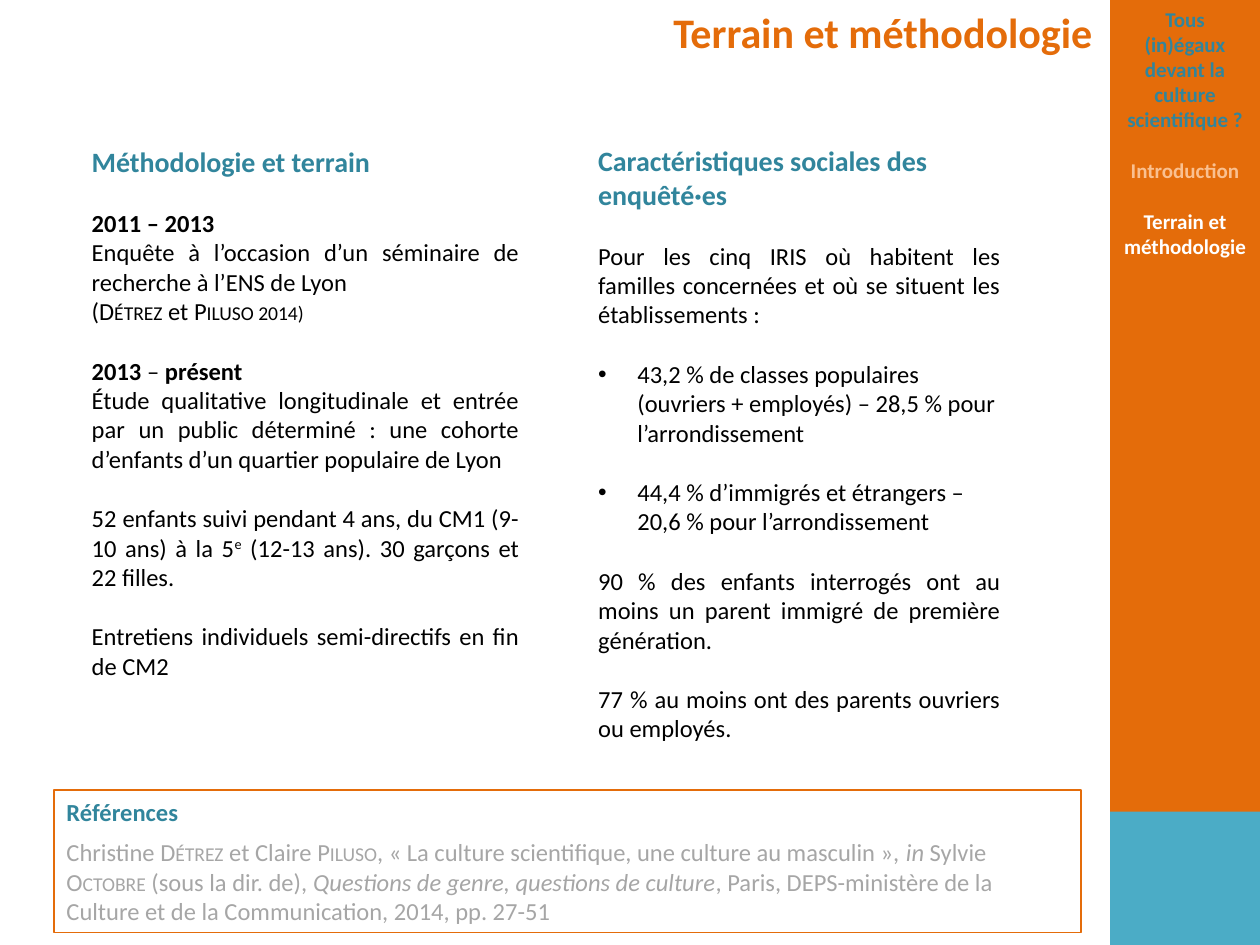
from lxml import etree
from pptx import Presentation
from pptx.dml.color import RGBColor
from pptx.enum import shapes, text
from pptx.oxml.ns import qn
from pptx.util import Cm, Pt

theme = {
    "font": "Calibri",
    "orange": "E46C0A", "peach": "FAC090", "teal": "31859C", "aqua": "4BACC6",
    "grey": "A6A6A6", "black": "000000", "white": "FFFFFF",
    "title": 24, "head": 16, "body": 14, "side": 12,
}

# Paragraph: (kind, gap before in lines, runs); run: (text, style letters)
# Styles: b bold, i italic, s small capitals, u superscript
title = [("title", 0, [("Terrain et méthodologie", "b")])]
menu = [
    ("menu", 0, [("Tous (in)égaux devant la culture scientifique ?", "b")]),
    ("past", 1, [("Introduction", "b")]),
    ("now", 1, [("Terrain et méthodologie", "b")]),
]
method = [
    ("head", 0, [("Méthodologie et terrain", "b")]),
    ("body", 1, [("2011 – 2013", "b")]),
    ("body", 0, [("Enquête à l’occasion d’un séminaire de recherche à l’ENS de Lyon", "")]),
    ("body", 0, [("(", ""), ("Détrez", "s"), (" et ", ""), ("Piluso 2014)", "s")]),
    ("body", 1, [("2013 ", "b"), ("– ", ""), ("présent", "b")]),
    ("body", 0, [("Étude qualitative longitudinale et entrée par un public déterminé : "
                  "une cohorte d’enfants d’un quartier populaire de Lyon", "")]),
    ("body", 1, [("52 enfants suivi pendant 4 ans, du CM1 (9-10 ans) à la 5", ""),
                 ("e", "u"), (" (12-13 ans). 30 garçons et 22 filles.", "")]),
    ("body", 1, [("Entretiens individuels semi-directifs en fin de CM2", "")]),
]
social = [
    ("head", 0, [("Caractéristiques sociales des enquêté·es", "b")]),
    ("body", 1, [("Pour les cinq IRIS où habitent les familles concernées "
                  "et où se situent les établissements :", "")]),
    ("item", 1, [("43,2 % de classes populaires (ouvriers + employés) "
                  "– 28,5 % pour l’arrondissement", "")]),
    ("item", 1, [("44,4 % d’immigrés et étrangers – 20,6 % pour l’arrondissement", "")]),
    ("body", 1, [("90 % des enfants interrogés ont au moins un parent immigré "
                  "de première génération.", "")]),
    ("body", 1, [("77 % au moins ont des parents ouvriers ou employés.", "")]),
]
refs = [
    ("label", 0, [("Références", "b")]),
    ("cite", 0.35, [
        ("Christine ", ""), ("Détrez", "s"), (" et Claire ", ""), ("Piluso", "s"),
        (", « La culture scientifique, une culture au masculin », ", ""),
        ("in", "i"), (" Sylvie ", ""), ("Octobre", "s"), (" (sous la dir. de), ", ""),
        ("Questions de genre, questions de culture", "i"),
        (", Paris, DEPS-ministère de la Culture et de la Communication, "
         "2014, pp. 27-51", "")]),
]

# Kind: size, colour, alignment
al = text.PP_ALIGN
kinds = {
    "title": ("title", "orange", al.CENTER),
    "menu": ("side", "teal", al.CENTER),
    "past": ("side", "peach", al.CENTER),
    "now": ("side", "white", al.CENTER),
    "head": ("head", "teal", al.LEFT),
    "body": ("body", "black", al.JUSTIFY),
    "item": ("body", "black", al.LEFT),
    "label": ("body", "teal", al.LEFT),
    "cite": ("body", "grey", al.LEFT),
}

# Layout in centimetres
wide, high = 25.4, 19.05
bar = 22.38
side = wide - bar
foot = 16.36
line = 1.22  # line height per point of type


def color(name):
    return RGBColor.from_string(theme[name])


def apply(obj, vals):
    for key, val in vals.items():
        setattr(obj, key, val)


def bullet(para):
    props = para._p.get_or_add_pPr()
    props.set("marL", str(Cm(0.79)))
    props.set("indent", str(-Cm(0.79)))
    etree.SubElement(props, qn("a:buFont")).set("typeface", "Arial")
    etree.SubElement(props, qn("a:buChar")).set("char", "•")


def write(shape, paras, wrap=True, anchor=text.MSO_ANCHOR.TOP):
    frame = shape.text_frame
    apply(frame, {"word_wrap": wrap, "vertical_anchor": anchor,
                  "auto_size": text.MSO_AUTO_SIZE.NONE})
    for n, (kind, gap, runs) in enumerate(paras):
        para = frame.paragraphs[0] if n == 0 else frame.add_paragraph()
        size, tint, align = kinds[kind]
        points = theme[size]
        apply(para, {"alignment": align, "space_after": Pt(0),
                     "space_before": Pt(round(gap * points * line, 1))})
        if kind == "item":
            bullet(para)
        for words, style in runs:
            run = para.add_run()
            run.text = words
            apply(run.font, {"name": theme["font"], "size": Pt(points),
                             "bold": "b" in style, "italic": "i" in style})
            run.font.color.rgb = color(tint)
            props = run.font._element
            if "s" in style:
                props.set("cap", "small")
            if "u" in style:
                props.set("baseline", "30000")


def box(slide, at, fill, edge=None):
    shape = slide.shapes.add_shape(shapes.MSO_SHAPE.RECTANGLE, *map(Cm, at))
    shape.shadow.inherit = False
    shape.fill.solid()
    shape.fill.fore_color.rgb = color(fill)
    if edge:
        shape.line.color.rgb = color(edge)
        shape.line.width = Pt(1)
    else:
        shape.line.fill.background()
    return shape


def main():
    deck = Presentation()
    apply(deck, {"slide_width": Cm(wide), "slide_height": Cm(high)})
    slide = deck.slides.add_slide(deck.slide_layouts[5])

    # Title
    top = slide.shapes.title
    apply(top, {"left": Cm(13.23), "top": Cm(0), "width": Cm(9.14), "height": Cm(1.28)})
    write(top, title, wrap=False)

    # Sidebar with the outline of the talk
    write(box(slide, (bar, 0, side, 17.35), "orange"), menu)
    box(slide, (bar, foot, side, high - foot), "aqua")

    # References
    write(box(slide, (1.09, 15.93, 20.7, 2.87), "white", "orange"), refs,
          anchor=text.MSO_ANCHOR.MIDDLE)

    # Two columns
    for at, paras in (((1.6, 2.79, 9.12, 11.13), method),
                      ((11.81, 2.77, 8.61, 12.8), social)):
        write(slide.shapes.add_textbox(*map(Cm, at)), paras)

    deck.save("out.pptx")


if __name__ == "__main__":
    main()
